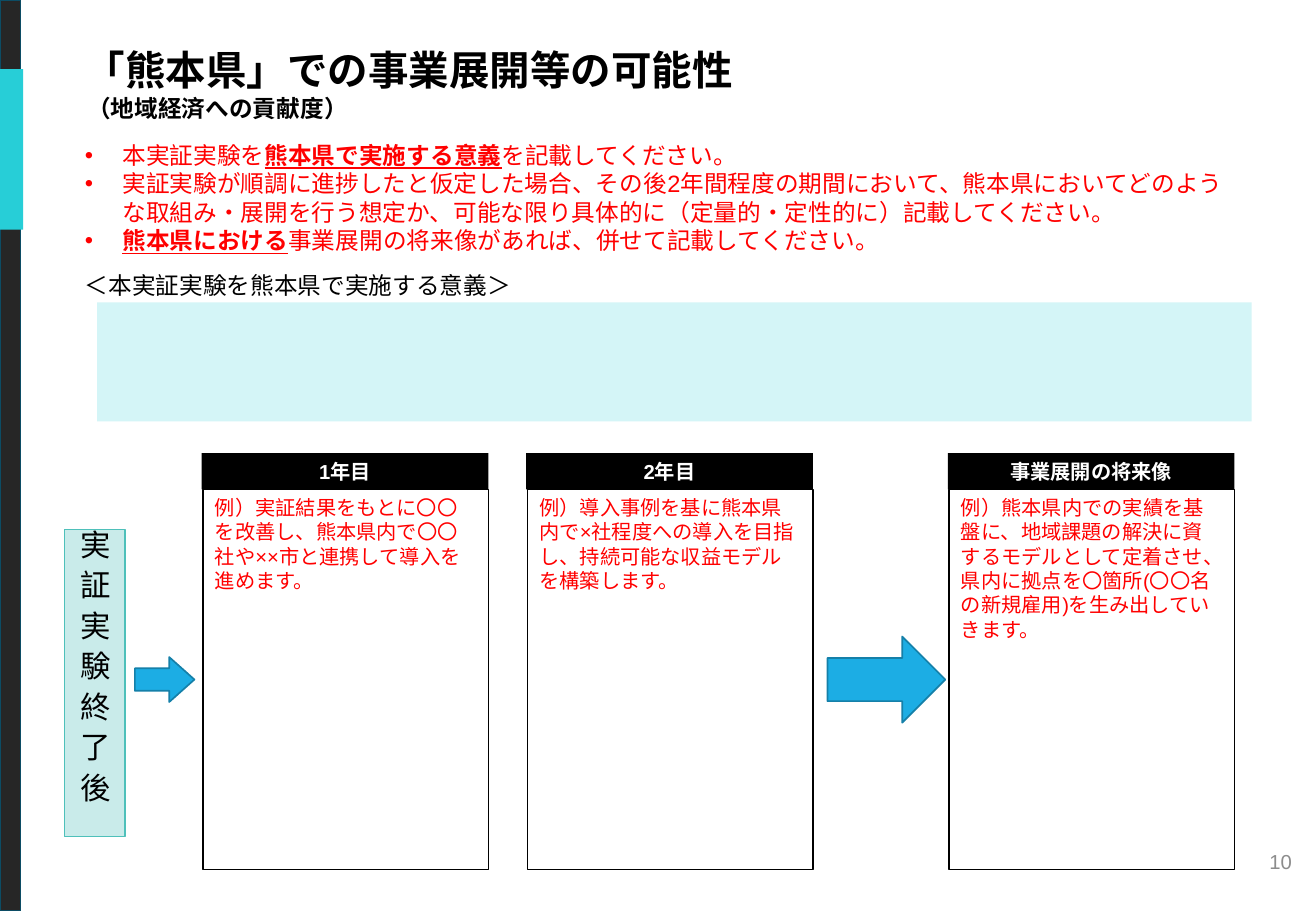
from lxml import etree
from pptx import Presentation
from pptx.dml.color import RGBColor
from pptx.enum.shapes import MSO_SHAPE
from pptx.enum.text import MSO_ANCHOR, PP_ALIGN
from pptx.oxml.ns import qn
from pptx.util import Inches, Pt

RECT, ARROW = MSO_SHAPE.RECTANGLE, MSO_SHAPE.RIGHT_ARROW
TOP, MIDDLE = MSO_ANCHOR.TOP, MSO_ANCHOR.MIDDLE
LEFT, CENTER, RIGHT = PP_ALIGN.LEFT, PP_ALIGN.CENTER, PP_ALIGN.RIGHT

FONT = "Arial"
COLORS = {
    "black": "000000", "white": "FFFFFF", "red": "FF0000", "gray": "8C8C8C",
    "dark": "262626", "navy": "0C4C64", "cyan": "27CED7", "pale": "D4F5F7",
    "teal": "4EC0BA", "blue": "1CADE4", "edge": "1580A9",
}

NOTES = [
    [("本実証実験を", False), ("熊本県で実施する意義", True),
     ("を記載してください。", False)],
    [("実証実験が順調に進捗したと仮定した場合、その後2年間程度の期間において、"
      "熊本県においてどのような取組み・展開を行う想定か、可能な限り具体的に"
      "（定量的・定性的に）記載してください。", False)],
    [("熊本県における", True),
     ("事業展開の将来像があれば、併せて記載してください。", False)],
]
STAGES = [
    (1.66, "1年目", "例）実証結果をもとに〇〇を改善し、熊本県内で〇〇社や××市と"
                    "連携して導入を進めます。"),
    (4.33, "2年目", "例）導入事例を基に熊本県内で×社程度への導入を目指し、"
                    "持続可能な収益モデルを構築します。"),
    (7.8, "事業展開の将来像", "例）熊本県内での実績を基盤に、地域課題の解決に資する"
                              "モデルとして定着させ、県内に拠点を〇箇所(〇〇名の新規雇用)"
                              "を生み出していきます。"),
]


def color(name):
    return RGBColor.from_string(COLORS[name])


class Page:
    """Holds the current slide and draws styled elements on it."""

    def __init__(self, slide):
        self.shapes = slide.shapes

    def shape(self, kind, box, fill=None, line=None, width=1):
        item = self.shapes.add_shape(kind, *map(Inches, box))
        item.shadow.inherit = False
        if fill:
            item.fill.solid()
            item.fill.fore_color.rgb = color(fill)
        else:
            item.fill.background()
        if line:
            item.line.color.rgb = color(line)
            item.line.width = Pt(width)
        else:
            item.line.fill.background()
        return item

    def style(self, run, size, ink, bold=False, under=False):
        font = run.font
        font.name, font.size = FONT, Pt(size)
        font.bold, font.underline = bold, under
        font.color.rgb = color(ink)

    def put_text(self, item, text, size, ink, bold=False, align=LEFT, anchor=TOP):
        frame = item.text_frame
        frame.word_wrap = True
        frame.vertical_anchor = anchor
        frame.text = text
        para = frame.paragraphs[0]
        para.alignment = align
        self.style(para.runs[0], size, ink, bold)

    def label(self, box, text, size, ink="black", **look):
        item = self.shapes.add_textbox(*map(Inches, box))
        self.put_text(item, text, size, ink, **look)

    def bullets(self, box, items, size, ink):
        """Each item is a list of (text, strong) parts."""
        frame = self.shapes.add_textbox(*map(Inches, box)).text_frame
        frame.word_wrap = True
        for index, parts in enumerate(items):
            para = frame.add_paragraph() if index else frame.paragraphs[0]
            props = para._p.get_or_add_pPr()
            props.set("marL", str(Inches(0.31)))
            props.set("indent", str(-Inches(0.31)))
            etree.SubElement(props, qn("a:buFont")).set("typeface", FONT)
            etree.SubElement(props, qn("a:buChar")).set("char", "•")
            for text, strong in parts:
                run = para.add_run()
                run.text = text
                self.style(run, size, ink, strong, strong)

    def tower(self, box, text, size, tone):
        """Translucent box with vertical, spaced text."""
        item = self.shape(RECT, box, tone, tone, 0.75)
        tint = item._element.spPr.find(qn("a:solidFill")).find(qn("a:srgbClr"))
        etree.SubElement(tint, qn("a:alpha")).set("val", "30000")
        self.put_text(item, text, size, "black", align=CENTER, anchor=MIDDLE)
        frame = item.text_frame
        frame.margin_top = frame.margin_bottom = 0
        frame._txBody.bodyPr.set("vert", "eaVert")
        run = frame.paragraphs[0].runs[0]
        run._r.get_or_add_rPr().set("spc", "600")

    def stage(self, left, head, text):
        card = self.shape(RECT, (left + 0.01, 4.03, 2.35, 3.13), line="black")
        self.put_text(card, text, 12, "red")
        bar = self.shape(RECT, (left, 3.73, 2.36, 0.3), "black")
        self.put_text(bar, head, 12, "white", True, CENTER, MIDDLE)

    def arrow(self, box, head=0.5):
        item = self.shape(ARROW, box, "blue", "edge")
        item.adjustments[1] = head


def main():
    deck = Presentation()
    deck.slide_width, deck.slide_height = Inches(10.83), Inches(7.5)
    page = Page(deck.slides.add_slide(deck.slide_layouts[6]))

    page.shape(RECT, (0, 0, 0.17, 7.5), "dark", "navy")
    page.shape(RECT, (0, 0.57, 0.19, 1.32), "cyan")
    page.label((0.6, 0.32, 9.95, 0.5), "「熊本県」での事業展開等の可能性", 24, bold=True)
    page.label((0.62, 0.72, 9.95, 0.34), "（地域経済への貢献度）", 14, bold=True)
    page.label((8.29, 6.89, 2.44, 0.4), "10", 12, "gray", align=RIGHT, anchor=MIDDLE)

    page.bullets((0.6, 1.11, 9.73, 1.28), NOTES, 14, "red")
    page.label((0.6, 2.18, 4.67, 0.34), "＜本実証実験を熊本県で実施する意義＞", 14)
    page.shape(RECT, (0.8, 2.49, 9.5, 0.98), "pale")

    page.tower((0.53, 4.36, 0.5, 2.53), "実証実験終了後", 18, "teal")
    for stage in STAGES:
        page.stage(*stage)
    page.arrow((6.81, 5.24, 0.97, 0.71))
    page.arrow((1.11, 5.41, 0.49, 0.37), 0.56)

    deck.save("out.pptx")


if __name__ == "__main__":
    main()
